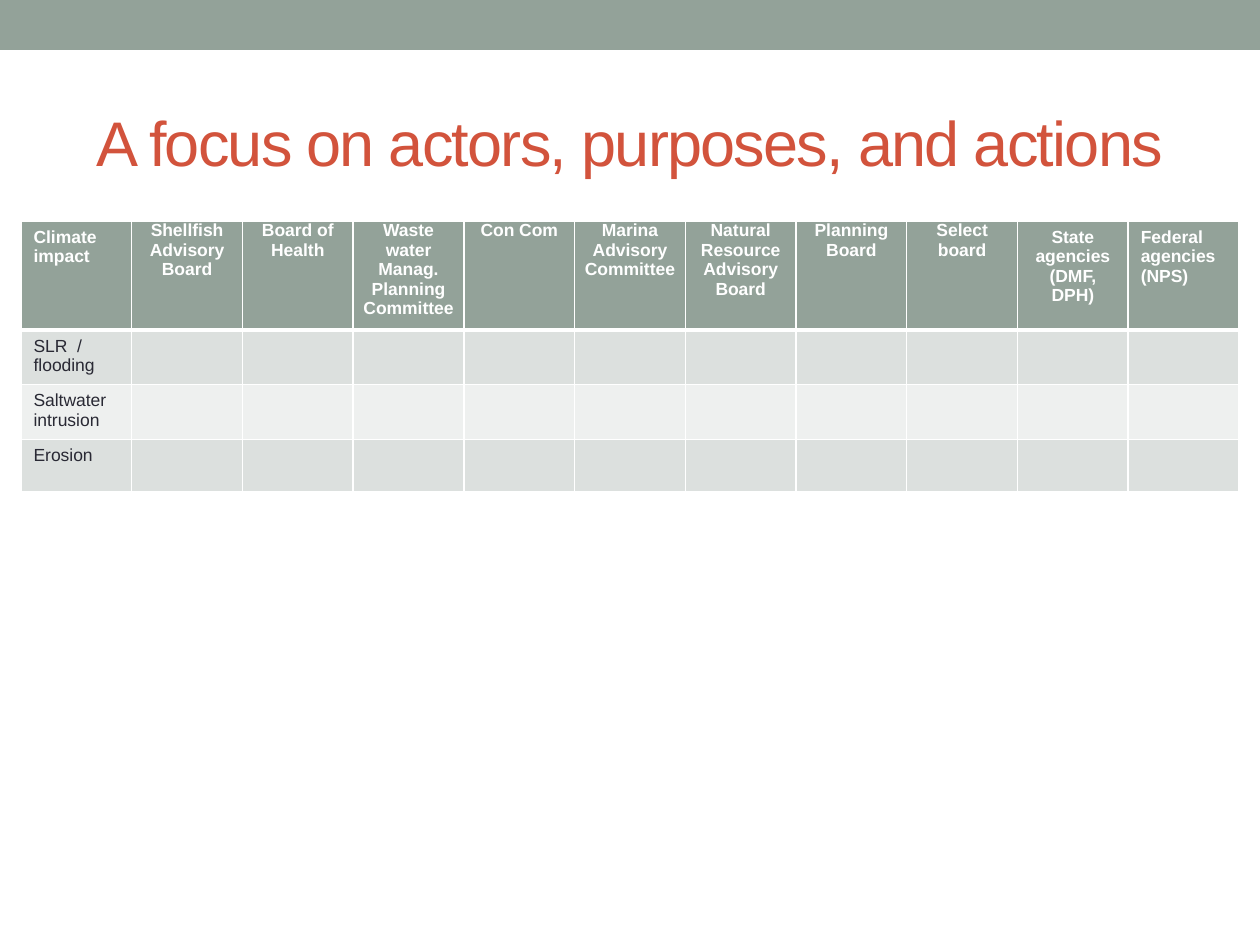
import pptx
import pptx.util
import pptx.dml.color
import pptx.enum.shapes
import pptx.enum.text
import lxml.etree
from dataclasses import dataclass

# Content
TITLE = "A focus on actors, purposes, and actions"
# Heading text, centred, tight margins
HEADINGS = [
    ("Climate impact", False, False),
    ("Shellfish Advisory Board", True, True),
    ("Board of Health", True, True),
    ("Waste water Manag. Planning Committee", True, True),
    ("Con Com", True, True),
    ("Marina Advisory Committee", True, True),
    ("Natural Resource Advisory Board", True, True),
    ("Planning Board", True, True),
    ("Select board", True, True),
    ("State agencies\n(DMF, DPH)", True, False),
    ("Federal agencies\n(NPS)", False, False),
]
IMPACTS = ["SLR  /\nflooding", "Saltwater intrusion", "Erosion"]

# Geometry in px
PAGE = (1260, 945)
BAND = (0, 0, 1260, 50)
TITLE_BOX = (63, 73, 1134, 136)
TABLE_LEFT, TABLE_TOP, TABLE_WIDTH = 21, 221, 1218
HEADER_HEIGHT, ROW_HEIGHT = 109, 52
TIGHT_MARGIN = 9


@dataclass(frozen=True)
class Theme:
    font: str = "Arial"
    sage: str = "93A299"
    rust: str = "D2533C"
    ink: str = "292934"
    white: str = "FFFFFF"
    stripes: tuple = ("DCE0DE", "EEF0EF")
    title_size: int = 36
    table_size: int = 10
    thin: int = 1
    thick: int = 3


THEME = Theme()


def px(length):
    return pptx.util.Emu(round(length * 914400 / 126))


def color(code):
    return pptx.dml.color.RGBColor.from_string(code)


def write(frame, text, size, ink, bold=False, centred=False):
    frame.text = text
    for para in frame.paragraphs:
        if centred:
            para.alignment = pptx.enum.text.PP_ALIGN.CENTER
        for span in para.runs:
            span.font.name = THEME.font
            span.font.size = pptx.util.Pt(size)
            span.font.bold = bold
            span.font.color.rgb = color(ink)


def paint(cell, fill, bottom, top):
    """Give a cell its borders, then its fill."""
    properties = cell._tc.get_or_add_tcPr()
    widths = {"lnL": THEME.thin, "lnR": THEME.thin, "lnT": top, "lnB": bottom}
    for side, width in widths.items():
        line = lxml.etree.SubElement(properties, pptx.oxml.ns.qn("a:" + side),
                                     w=str(pptx.util.Pt(width)))
        solid = lxml.etree.SubElement(line, pptx.oxml.ns.qn("a:solidFill"))
        lxml.etree.SubElement(solid, pptx.oxml.ns.qn("a:srgbClr"), val=THEME.white)
    cell.fill.solid()
    cell.fill.fore_color.rgb = color(fill)


def add_band(page):
    band = page.shapes.add_shape(pptx.enum.shapes.MSO_SHAPE.RECTANGLE, *map(px, BAND))
    band.shadow.inherit = False
    band.fill.solid()
    band.fill.fore_color.rgb = color(THEME.sage)
    band.line.fill.background()


def add_title(page):
    frame = page.shapes.add_textbox(*map(px, TITLE_BOX)).text_frame
    frame.word_wrap = True
    frame.vertical_anchor = pptx.enum.text.MSO_ANCHOR.MIDDLE
    write(frame, TITLE, THEME.title_size, THEME.rust, centred=True)
    # Tighter letter spacing, in hundredths of a point
    frame.paragraphs[0].runs[0].font._element.set("spc", "-100")


def add_matrix(page):
    heights = [HEADER_HEIGHT] + [ROW_HEIGHT] * len(IMPACTS)
    table = page.shapes.add_table(
        len(heights), len(HEADINGS), px(TABLE_LEFT), px(TABLE_TOP),
        px(TABLE_WIDTH), px(sum(heights))).table
    for column in table.columns:
        column.width = px(TABLE_WIDTH / len(HEADINGS))
    for row, height in zip(table.rows, heights):
        row.height = px(height)

    # Heading row
    for column, (text, centred, tight) in enumerate(HEADINGS):
        cell = table.cell(0, column)
        if tight:
            cell.margin_left = cell.margin_right = px(TIGHT_MARGIN)
            cell.margin_top = cell.margin_bottom = 0
        write(cell.text_frame, text, THEME.table_size, THEME.white, True, centred)
        paint(cell, THEME.sage, THEME.thick, THEME.thin)

    # Impact rows, striped, with open cells for each actor
    for row, impact in enumerate(IMPACTS, start=1):
        write(table.cell(row, 0).text_frame, impact, THEME.table_size, THEME.ink)
        for column in range(len(HEADINGS)):
            paint(table.cell(row, column), THEME.stripes[(row - 1) % 2],
                  THEME.thin, THEME.thick if row == 1 else THEME.thin)


def main():
    deck = pptx.Presentation()
    deck.slide_width, deck.slide_height = map(px, PAGE)
    page = deck.slides.add_slide(deck.slide_layouts[6])
    add_band(page)
    add_title(page)
    add_matrix(page)
    deck.save("out.pptx")


if __name__ == "__main__":
    main()
